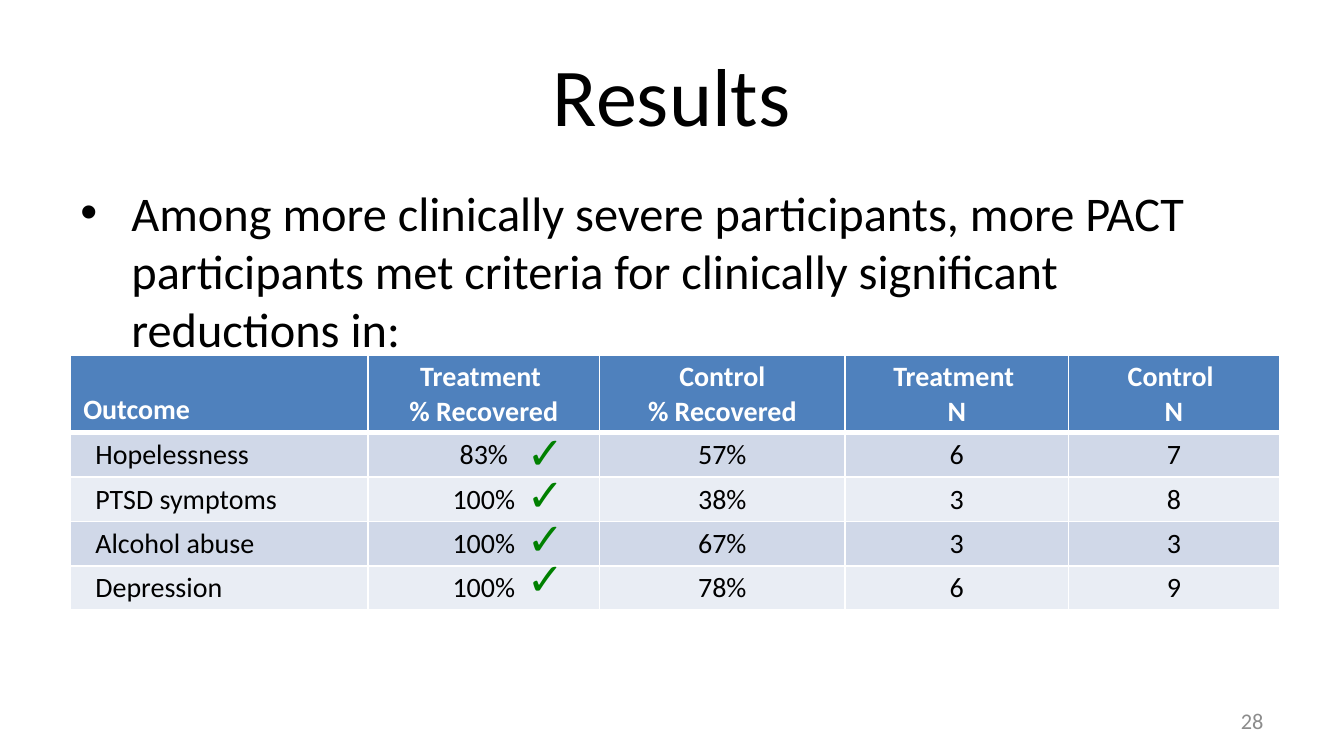
import pptx
import pptx.dml.color
import pptx.enum.text
import pptx.oxml
import pptx.oxml.ns
import pptx.util
from pptx.util import Inches

COLORS = {
    "text": "000000", "page": "8C8C8C", "check": "008000", "white": "FFFFFF",
    "header": "4F81BD", "odd": "D0D8E8", "even": "E9EDF4",
}
ALIGN = pptx.enum.text.PP_ALIGN
ANCHOR = pptx.enum.text.MSO_ANCHOR

SLIDE_WIDTH = 10
SLIDE_HEIGHT = SLIDE_WIDTH * 9 / 16
HEADERS = ["Outcome", "Treatment \n% Recovered", "Control\n% Recovered",
           "Treatment \nN", "Control \nN"]
OUTCOMES = [
    ["Hopelessness", "83%", "57%", "6", "7"],
    ["PTSD symptoms", "100%", "38%", "3", "8"],
    ["Alcohol abuse", "100%", "67%", "3", "3"],
    ["Depression", "100%", "78%", "6", "9"],
]
COLUMN_WIDTHS = [2.22, 1.72, 1.83, 1.66, 1.57]
HEADER_HEIGHT, ROW_HEIGHT = 0.57, 0.33
CHECK_OFFSETS = [0.47, 0.78, 1.11, 1.41]


def write_text(frame, text, size=15, color="text", font="Calibri", bold=False,
               align=ALIGN.LEFT):
    """Fill a text frame with one formatted paragraph per line of text."""
    frame.word_wrap = True
    for index, line in enumerate(text.split("\n")):
        paragraph = frame.add_paragraph() if index else frame.paragraphs[0]
        paragraph.alignment = align
        run = paragraph.add_run()
        run.text = line
        run.font.size = pptx.util.Pt(size)
        run.font.name = font
        run.font.bold = bold
        run.font.color.rgb = pptx.dml.color.RGBColor.from_string(COLORS[color])


def add_text(slide, box, text, anchor=ANCHOR.TOP, **style):
    """Add a text box and return its frame."""
    frame = slide.shapes.add_textbox(*map(Inches, box)).text_frame
    frame.vertical_anchor = anchor
    write_text(frame, text, **style)
    return frame


def add_statement(slide, box, text):
    """Add the bulleted statement above the table."""
    frame = add_text(slide, box, text, size=25.9)
    paragraph = frame.paragraphs[0]
    paragraph.space_before = pptx.util.Pt(2.5)
    properties = paragraph._p.get_or_add_pPr()
    properties.set("marL", str(Inches(0.38)))
    properties.set("indent", str(-Inches(0.38)))
    namespace = pptx.oxml.ns.nsdecls("a")
    for bullet in ('<a:buFont %s typeface="Arial"/>', '<a:buChar %s char="•"/>'):
        properties.append(pptx.oxml.parse_xml(bullet % namespace))


def set_borders(cell, bottom):
    """Draw white cell borders with the given bottom width in points."""
    properties = cell._tc.get_or_add_tcPr()
    widths = {"lnL": 1, "lnR": 1, "lnT": 1, "lnB": bottom}
    for index, (side, width) in enumerate(widths.items()):
        properties.insert(index, pptx.oxml.parse_xml(
            f'<a:{side} {pptx.oxml.ns.nsdecls("a")} w="{pptx.util.Pt(width)}">'
            f'<a:solidFill><a:srgbClr val="{COLORS["white"]}"/></a:solidFill>'
            f'</a:{side}>'))


def add_outcome_table(slide, box):
    """Add the recovery table and the check marks beside treatment rates."""
    left, top, _, _ = box
    rows = [HEADERS] + OUTCOMES
    table = slide.shapes.add_table(
        len(rows), len(HEADERS), *map(Inches, box)).table
    for column, width in zip(table.columns, COLUMN_WIDTHS):
        column.width = Inches(width)
    for r, values in enumerate(rows):
        is_header = r == 0
        table.rows[r].height = Inches(HEADER_HEIGHT if is_header else ROW_HEIGHT)
        fill = "header" if is_header else "odd" if r % 2 else "even"
        for c, value in enumerate(values):
            cell = table.cell(r, c)
            cell.margin_left = Inches(0.1 if is_header or c else 0.19)
            cell.margin_right = Inches(0.1)
            cell.margin_top = cell.margin_bottom = Inches(0.04)
            cell.vertical_anchor = ANCHOR.BOTTOM if is_header else ANCHOR.TOP
            cell.fill.solid()
            cell.fill.fore_color.rgb = pptx.dml.color.RGBColor.from_string(COLORS[fill])
            set_borders(cell, 3 if is_header else 1)
            write_text(cell.text_frame, value, bold=is_header,
                       color="white" if is_header else "text",
                       align=ALIGN.CENTER if c else ALIGN.LEFT)
    for offset in CHECK_OFFSETS:
        add_text(slide, (left + 3.3, top + offset, 1.08, 0.5), "✓",
                 size=24, color="check", font="Arial")


def build_results_slide(presentation):
    """Build the results slide."""
    slide = presentation.slides.add_slide(presentation.slide_layouts[6])
    add_text(slide, (0.5, 0.23, 9, 0.94), "Results", size=44,
             anchor=ANCHOR.MIDDLE, align=ALIGN.CENTER)
    add_statement(slide, (0.5, 1.31, 9, 1.18),
                  "Among more clinically severe participants, more PACT "
                  "participants met criteria for clinically significant "
                  "reductions in:")
    add_text(slide, (7.17, 5.21, 2.33, 0.3), "28", size=12, color="page",
             anchor=ANCHOR.MIDDLE, align=ALIGN.RIGHT)
    add_outcome_table(slide, (0.52, 2.64, 9, 1.88))


def main():
    """Create and save the presentation."""
    presentation = pptx.Presentation()
    presentation.slide_width = Inches(SLIDE_WIDTH)
    presentation.slide_height = Inches(SLIDE_HEIGHT)
    build_results_slide(presentation)
    presentation.save("out.pptx")


if __name__ == "__main__":
    main()
